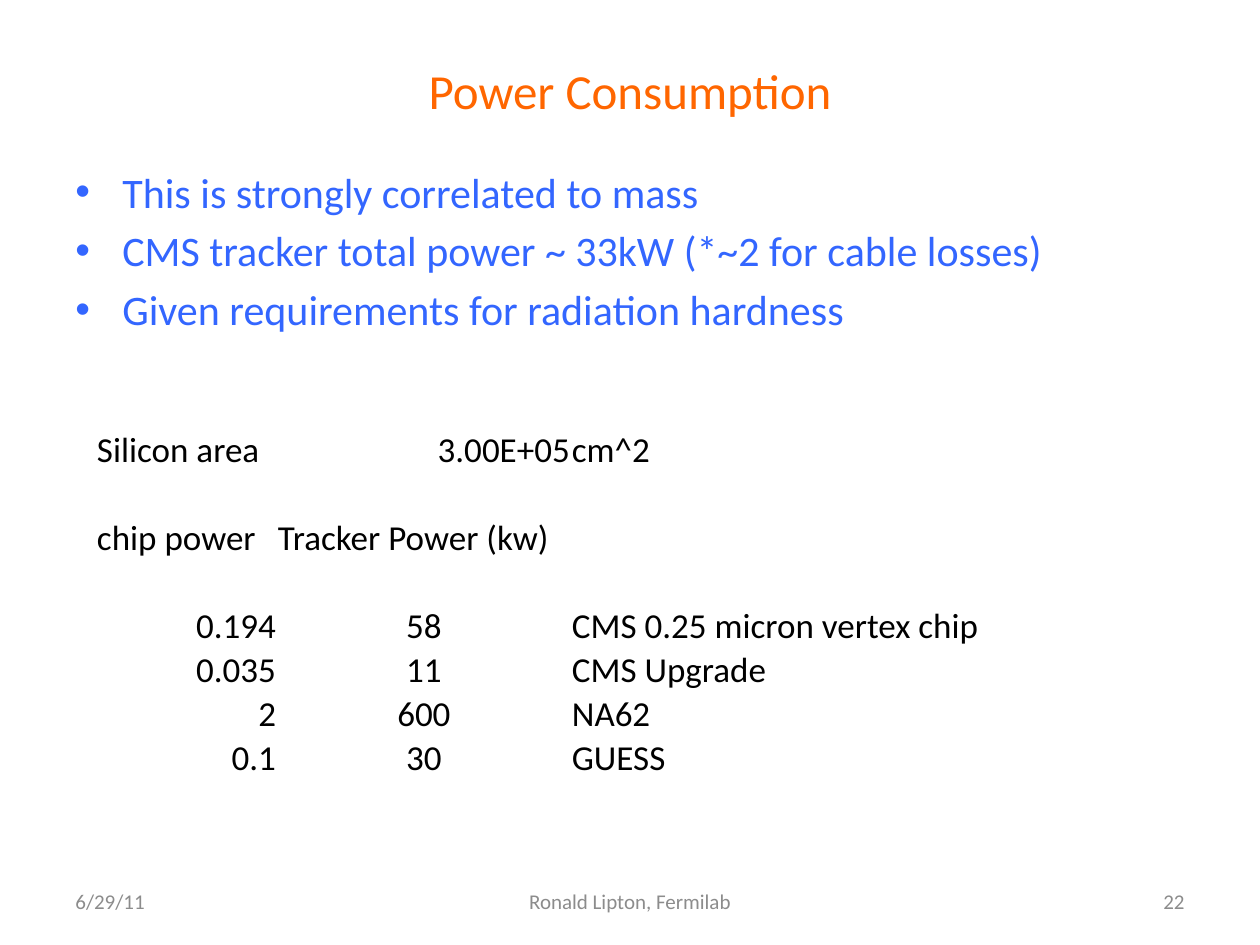
from pptx import Presentation
from pptx.dml.color import RGBColor
from pptx.enum.text import MSO_ANCHOR, PP_ALIGN
from pptx.util import Emu, Pt
from lxml.etree import SubElement
from pptx.oxml.ns import qn

PX = 914400 // 126
ORANGE = RGBColor(0xFF, 0x66, 0x00)
BLUE = RGBColor(0x33, 0x66, 0xFF)
GRAY = RGBColor(0x8C, 0x8C, 0x8C)
BLACK = RGBColor(0, 0, 0)
WHITE = RGBColor(0xFF, 0xFF, 0xFF)
LEFT, CENTER, RIGHT = PP_ALIGN.LEFT, PP_ALIGN.CENTER, PP_ALIGN.RIGHT

BULLETS = [
    "This is strongly correlated to mass",
    "CMS tracker total power ~ 33kW (*~2 for cable losses)",
    "Given requirements for radiation hardness",
]
COLUMNS = [181, 294, 431]
ROW_HEIGHT = 44
HEADING_ALIGN = [LEFT, LEFT, LEFT]
AREA_ALIGN = [LEFT, RIGHT, LEFT]
CHIP_ALIGN = [RIGHT, CENTER, LEFT]
POWER_ROWS = [
    (["Silicon area", "3.00E+05", "cm^2"], AREA_ALIGN),
    ([""] * 3, HEADING_ALIGN),
    (["chip power", "Tracker Power (kw)", ""], HEADING_ALIGN),
    ([""] * 3, HEADING_ALIGN),
    (["0.194", "58", "CMS 0.25 micron vertex chip"], CHIP_ALIGN),
    (["0.035", "11", "CMS Upgrade"], CHIP_ALIGN),
    (["2", "600", "NA62"], CHIP_ALIGN),
    (["0.1", "30", "GUESS"], CHIP_ALIGN),
]


def px(*lengths):
    return [Emu(n * PX) for n in lengths]


def write(p, text, size, color, align=LEFT):
    p.alignment = align
    r = p.add_run()
    r.text = text
    r.font.name = "Calibri"
    r.font.size = Pt(size)
    r.font.color.rgb = color


def add_bullet(p, indent):
    pPr = p._p.get_or_add_pPr()
    pPr.set("marL", str(indent * PX))
    pPr.set("indent", str(-indent * PX))
    SubElement(pPr, qn("a:buFont")).set("typeface", "Arial")
    SubElement(pPr, qn("a:buChar")).set("char", "•")


def text_frame(s, x, y, w, h, anchor):
    tf = s.shapes.add_textbox(*px(x, y, w, h)).text_frame
    tf.word_wrap = True
    tf.vertical_anchor = anchor
    return tf


def place_title(s, x, y, w, h):
    sp = s.shapes.title
    sp.left, sp.top, sp.width, sp.height = px(x, y, w, h)
    sp.fill.solid()
    sp.fill.fore_color.rgb = WHITE
    sp.text_frame.vertical_anchor = MSO_ANCHOR.MIDDLE
    write(sp.text_frame.paragraphs[0], "Power Consumption", 28, ORANGE, CENTER)


def place_bullets(s, x, y, w, h):
    tf = text_frame(s, x, y, w, h, MSO_ANCHOR.TOP)
    for i, text in enumerate(BULLETS):
        p = tf.add_paragraph() if i else tf.paragraphs[0]
        add_bullet(p, 47)
        if i:
            p.space_before = Pt(4.8)
        write(p, text, 24, BLUE)


def place_power_table(s, x, y):
    frame = s.shapes.add_table(
        len(POWER_ROWS), len(COLUMNS),
        *px(x, y, sum(COLUMNS), ROW_HEIGHT * len(POWER_ROWS)))
    table = frame.table
    table.first_row = table.horz_banding = False
    for column, width in zip(table.columns, px(*COLUMNS)):
        column.width = width
    for row, (texts, aligns) in zip(table.rows, POWER_ROWS):
        row.height = Emu(ROW_HEIGHT * PX)
        for cell, text, align in zip(row.cells, texts, aligns):
            cell.fill.background()
            cell.vertical_anchor = MSO_ANCHOR.BOTTOM
            cell.margin_left = cell.margin_right = cell.margin_top = Emu(PX)
            cell.margin_bottom = 0
            if text:
                write(cell.text_frame.paragraphs[0], text, 20, BLACK, align)


def place_footer(s, x, y, w, h):
    side, middle = 294, 400
    parts = [
        ("6/29/11", x, side, LEFT),
        ("Ronald Lipton, Fermilab", x + (w - middle) // 2, middle, CENTER),
        ("22", x + w - side, side, RIGHT),
    ]
    for text, left, width, align in parts:
        tf = text_frame(s, left, y, width, h, MSO_ANCHOR.MIDDLE)
        write(tf.paragraphs[0], text, 12, GRAY, align)


def main():
    prs = Presentation()
    prs.slide_width, prs.slide_height = px(1260, 945)
    s = prs.slides.add_slide(prs.slide_layouts[5])
    place_title(s, 63, 38, 1134, 103)
    place_bullets(s, 63, 160, 1063, 591)
    place_footer(s, 63, 876, 1134, 50)
    place_power_table(s, 96, 428)
    prs.save("out.pptx")


if __name__ == "__main__":
    main()
